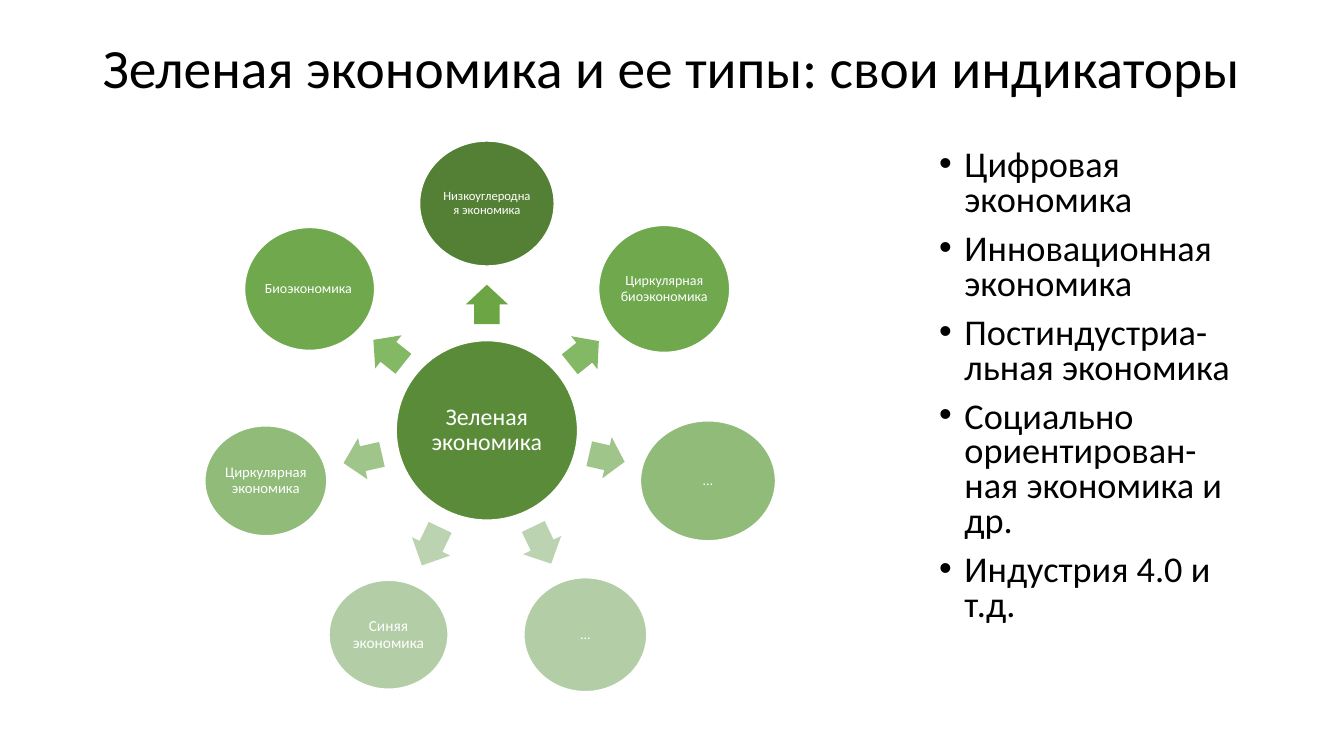
from math import cos, radians, sin

from lxml.etree import SubElement
from pptx import Presentation
from pptx.dml.color import RGBColor
from pptx.enum.shapes import MSO_SHAPE as Shape
from pptx.enum.text import MSO_ANCHOR as Anchor, PP_ALIGN as Align
from pptx.oxml.ns import qn
from pptx.util import Pt

COLORS = {
    "text": "000000", "white": "FFFFFF", "hub": "5A8B39",
    "circle1": "538035", "circle2": "6FA84D", "circle3": "90BB79", "circle4": "B3CEA7",
    "arrow1": "6BA544", "arrow2": "83B864", "arrow3": "9FC58B", "arrow4": "BBD3B0",
}
HUB_X, HUB_Y = 347.8, 307.4
ORBIT = 162
ARROW_HEIGHT = 30.2

# label, text size, alignment, circle width and height, shade, arrow length and distance
TYPES = [
    ("Низкоуглеродная экономика", 9, Align.CENTER, 96.2, 89.3, 1, 28.1, 90),
    ("Циркулярная биоэкономика", 10, Align.CENTER, 93.6, 90.7, 2, 26.6, 89),
    ("...", 10, Align.CENTER, 96.5, 85.7, 3, 25.9, 88),
    ("...", 10, Align.CENTER, 87.8, 81.4, 4, 29.5, 91),
    ("Синяя экономика", 11, Align.CENTER, 85, 77.8, 4, 30.2, 92),
    ("Циркулярная экономика", 10.5, Align.CENTER, 87.1, 78.5, 3, 28.1, 91),
    ("Биоэкономика", 10, Align.LEFT, 92.9, 87.8, 2, 27.4, 90),
]
OTHER_ECONOMIES = [
    "Цифровая экономика",
    "Инновационная экономика",
    "Постиндустриа-льная экономика",
    "Социально ориентирован-ная экономика и др.",
    "Индустрия 4.0 и т.д.",
]


class Painter:
    """Draws the elements of one slide in a shared style."""

    font = "Calibri"

    def __init__(self, slide):
        self.shapes = slide.shapes

    def color(self, name):
        return RGBColor.from_string(COLORS[name])

    def style(self, para, size, color, spacing):
        para.line_spacing = spacing
        for span in para.runs:
            span.font.name = self.font
            span.font.size = Pt(size)
            span.font.color.rgb = self.color(color)

    def text_box(self, left, top, width, height, lines, size, spacing, anchor):
        box = self.shapes.add_textbox(Pt(left), Pt(top), Pt(width), Pt(height))
        frame = box.text_frame
        frame.word_wrap = True
        frame.vertical_anchor = anchor
        frame.text = "\n".join(lines)
        for para in frame.paragraphs:
            self.style(para, size, "text", spacing)
        return frame

    def bullets(self, left, top, width, height, lines, size):
        frame = self.text_box(left, top, width, height, lines, size, 0.8, Anchor.TOP)
        for index, para in enumerate(frame.paragraphs):
            para.space_before = Pt(10 if index else 0)
            properties = para._p.get_or_add_pPr()
            properties.set("marL", str(Pt(18)))
            properties.set("indent", str(-Pt(18)))
            SubElement(properties, qn("a:buFont"), typeface="Arial")
            SubElement(properties, qn("a:buChar"), char="•")

    def centred_shape(self, kind, x, y, width, height, fill):
        shape = self.shapes.add_shape(
            kind, Pt(x - width / 2), Pt(y - height / 2), Pt(width), Pt(height))
        shape.shadow.inherit = False
        shape.fill.solid()
        shape.fill.fore_color.rgb = self.color(fill)
        return shape

    def circle(self, x, y, width, height, fill, label, size, align):
        shape = self.centred_shape(Shape.OVAL, x, y, width, height, fill)
        shape.line.color.rgb = self.color("white")
        shape.line.width = Pt(1)
        frame = shape.text_frame
        frame.word_wrap = True
        frame.vertical_anchor = Anchor.MIDDLE
        frame.margin_left = frame.margin_right = Pt(1)
        frame.margin_top = frame.margin_bottom = Pt(1)
        frame.text = label
        para = frame.paragraphs[0]
        para.alignment = align
        self.style(para, size, "white", 0.9)

    def arrow(self, x, y, length, angle, fill):
        shape = self.centred_shape(Shape.RIGHT_ARROW, x, y, length, ARROW_HEIGHT, fill)
        shape.line.fill.background()
        shape.adjustments[0] = 0.6
        shape.adjustments[1] = 0.5
        shape.rotation = angle


def around_hub(angle, distance):
    return (HUB_X + distance * cos(radians(angle)),
            HUB_Y + distance * sin(radians(angle)))


def main():
    deck = Presentation()
    deck.slide_width, deck.slide_height = Pt(960), Pt(540)
    page = deck.slides.add_slide(deck.slide_layouts[6])
    painter = Painter(page)

    painter.text_box(66.2, 28.8, 828, 43.2,
                     ["Зеленая экономика и ее типы: свои индикаторы"],
                     39.6, 0.9, Anchor.MIDDLE)
    painter.bullets(663.8, 103.7, 229.7, 383, OTHER_ECONOMIES, 25.9)

    painter.circle(HUB_X, HUB_Y, 129.6, 128.2, "hub",
                   "Зеленая экономика", 17, Align.CENTER)
    for index, (label, size, align, width, height, shade, length, distance) in enumerate(TYPES):
        angle = 360 * index / len(TYPES) - 90
        painter.arrow(*around_hub(angle, distance), length, angle, f"arrow{shade}")
        painter.circle(*around_hub(angle, ORBIT), width, height, f"circle{shade}",
                       label, size, align)

    deck.save("out.pptx")


if __name__ == "__main__":
    main()
